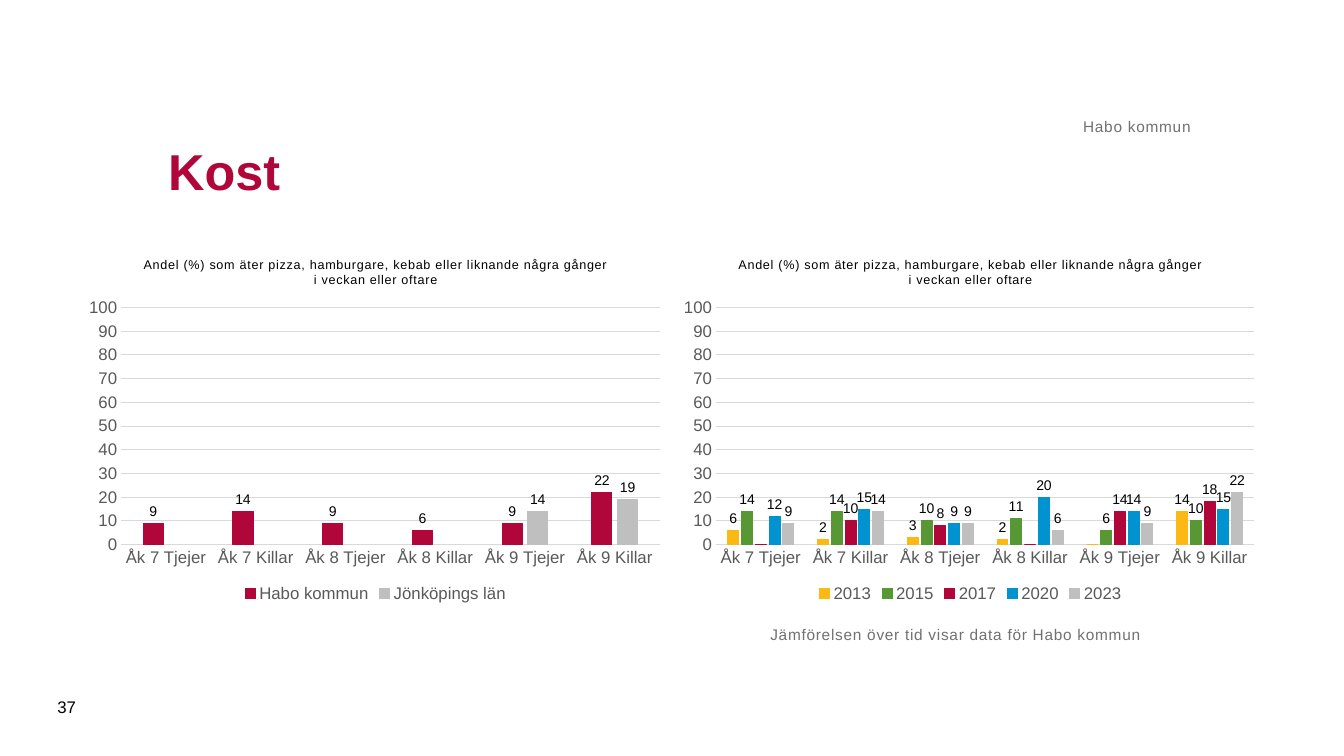
"""Build the slide "Kost" with two column charts on diet."""
from lxml import etree
from pptx import Presentation, util as u
from pptx.chart.data import CategoryChartData
from pptx.dml.color import RGBColor
from pptx.enum import chart as ch, text as tx
from pptx.oxml import parse_xml
from pptx.oxml.ns import nsdecls, qn

PX = 9144
RED = RGBColor(0xB1, 0x06, 0x3A)
SILVER = RGBColor(0xBF, 0xBF, 0xBF)
YELLOW = RGBColor(0xFD, 0xB9, 0x13)
GREEN = RGBColor(0x57, 0x98, 0x35)
BLUE = RGBColor(0x00, 0x93, 0xD0)
BLACK = RGBColor(0, 0, 0)
GREY = RGBColor(0x71, 0x71, 0x71)
DARK = RGBColor(0x59, 0x59, 0x59)
RULE = RGBColor(0xD9, 0xD9, 0xD9)

TITLE = "Andel (%) som äter pizza, hamburgare, kebab eller liknande några gånger i veckan eller oftare"
CATS = [f"Åk {year} {sex}" for year in (7, 8, 9) for sex in ("Tjejer", "Killar")]
CHARTS = [
    (79, "#,##0;#,##0", [
        ("Habo kommun", RED, (9, 14, 9, 6, 9, 22)),
        ("Jönköpings län", SILVER, (None, None, None, None, 14, 19)),
    ]),
    (669, "#,##0", [
        ("2013", YELLOW, (6, 2, 3, 2, 0, 14)),
        ("2015", GREEN, (14, 14, 10, 11, 6, 10)),
        ("2017", RED, (0, 10, 8, 0, 14, 18)),
        ("2020", BLUE, (12, 15, 9, 20, 14, 15)),
        ("2023", SILVER, (9, 14, 9, 6, 9, 22)),
    ]),
]
LAYOUT = {"layoutTarget": "inner", "xMode": "edge", "yMode": "edge",
          "x": 0.07, "y": 0.18, "w": 0.91, "h": 0.65}


def style(font, size, color, bold=False):
    font.name, font.size, font.bold = "Arial", u.Pt(size), bold
    font.color.rgb = color


def write(words, box, size=11, color=GREY, bold=False, inset=0, space=0,
          align=tx.PP_ALIGN.LEFT, anchor=tx.MSO_ANCHOR.TOP):
    frame = slide.shapes.add_textbox(*(n * PX for n in box)).text_frame
    frame.word_wrap = True
    frame.vertical_anchor = anchor
    frame.margin_left = frame.margin_right = inset * PX
    frame.margin_top = frame.margin_bottom = inset * PX // 2
    para = frame.paragraphs[0]
    para.alignment = align
    run = para.add_run()
    run.text = words
    style(run.font, size, color, bold)
    if space:
        run.font._element.set("spc", str(space))


deck = Presentation()
deck.slide_width, deck.slide_height = 1333 * PX, 750 * PX
slide = deck.slides.add_slide(deck.slide_layouts[6])

for left, code, rows in CHARTS:
    data = CategoryChartData()
    data.categories = CATS
    for name, color, vals in rows:
        data.add_series(name, vals)
    chart = slide.shapes.add_chart(ch.XL_CHART_TYPE.COLUMN_CLUSTERED, left * PX, 240 * PX,
                                   587 * PX, 362 * PX, data).chart
    style(chart.font, 10, BLACK)

    chart.has_title = True
    chart.chart_title.include_in_layout = False
    run = chart.chart_title.text_frame.paragraphs[0].add_run()
    run.text = TITLE
    style(run.font, 9, BLACK)
    run.font._element.set("spc", "50")

    chart.has_legend = True
    chart.legend.position = ch.XL_LEGEND_POSITION.BOTTOM
    chart.legend.include_in_layout = False
    style(chart.legend.font, 12, DARK)

    for axis in (chart.category_axis, chart.value_axis):
        axis.major_tick_mark = axis.minor_tick_mark = ch.XL_TICK_MARK.NONE
        style(axis.tick_labels.font, 12, DARK)
    scale = chart.value_axis
    scale.minimum_scale, scale.maximum_scale, scale.major_unit = 0, 100, 10
    scale.tick_labels.number_format = "#,##0;#,##0"
    scale.tick_labels.number_format_is_linked = False
    scale.format.line.fill.background()
    for line in (chart.category_axis.format.line, scale.major_gridlines.format.line):
        line.color.rgb = RULE
        line.width = u.Pt(0.75)

    plot = chart.plots[0]
    plot.gap_width, plot.overlap, plot.vary_by_categories = 219, -27, False
    for bars, (name, color, vals) in zip(plot.series, rows):
        bars.invert_if_negative = False
        bars.format.fill.solid()
        bars.format.fill.fore_color.rgb = color
        bars.format.line.color.rgb = color
        bars.format.line.width = u.Pt(0.75)
        tags = bars.data_labels
        tags.show_value = True
        tags.position = ch.XL_LABEL_POSITION.OUTSIDE_END
        tags.number_format, tags.number_format_is_linked = code, False
        style(tags.font, 10, BLACK)
        zeros = [i for i, val in enumerate(vals) if val == 0]
        for spot, i in enumerate(zeros):
            tags._element.insert(spot, parse_xml(
                f'<c:dLbl {nsdecls("c")}><c:idx val="{i}"/><c:delete val="1"/></c:dLbl>'))

    area = chart._chartSpace.chart.plotArea
    for old in area.findall(qn("c:layout")):
        area.remove(old)
    layout = etree.Element(qn("c:layout"))
    manual = etree.SubElement(layout, qn("c:manualLayout"))
    for key, val in LAYOUT.items():
        etree.SubElement(manual, qn("c:" + key)).set("val", str(val))
    area.insert(0, layout)

write("Kost", (157, 98, 1024, 142), size=36, color=RED, bold=True, inset=10,
      anchor=tx.MSO_ANCHOR.MIDDLE)
write("Jämförelsen över tid visar data för Habo kommun", (764, 620, 531, 94), space=50)
write("Habo kommun", (157, 62, 1024, 73), space=50,
      align=tx.PP_ALIGN.RIGHT, anchor=tx.MSO_ANCHOR.BOTTOM)
write("37", (47, 681, 57, 40), size=12, color=BLACK, inset=10, anchor=tx.MSO_ANCHOR.MIDDLE)

deck.save("out.pptx")
